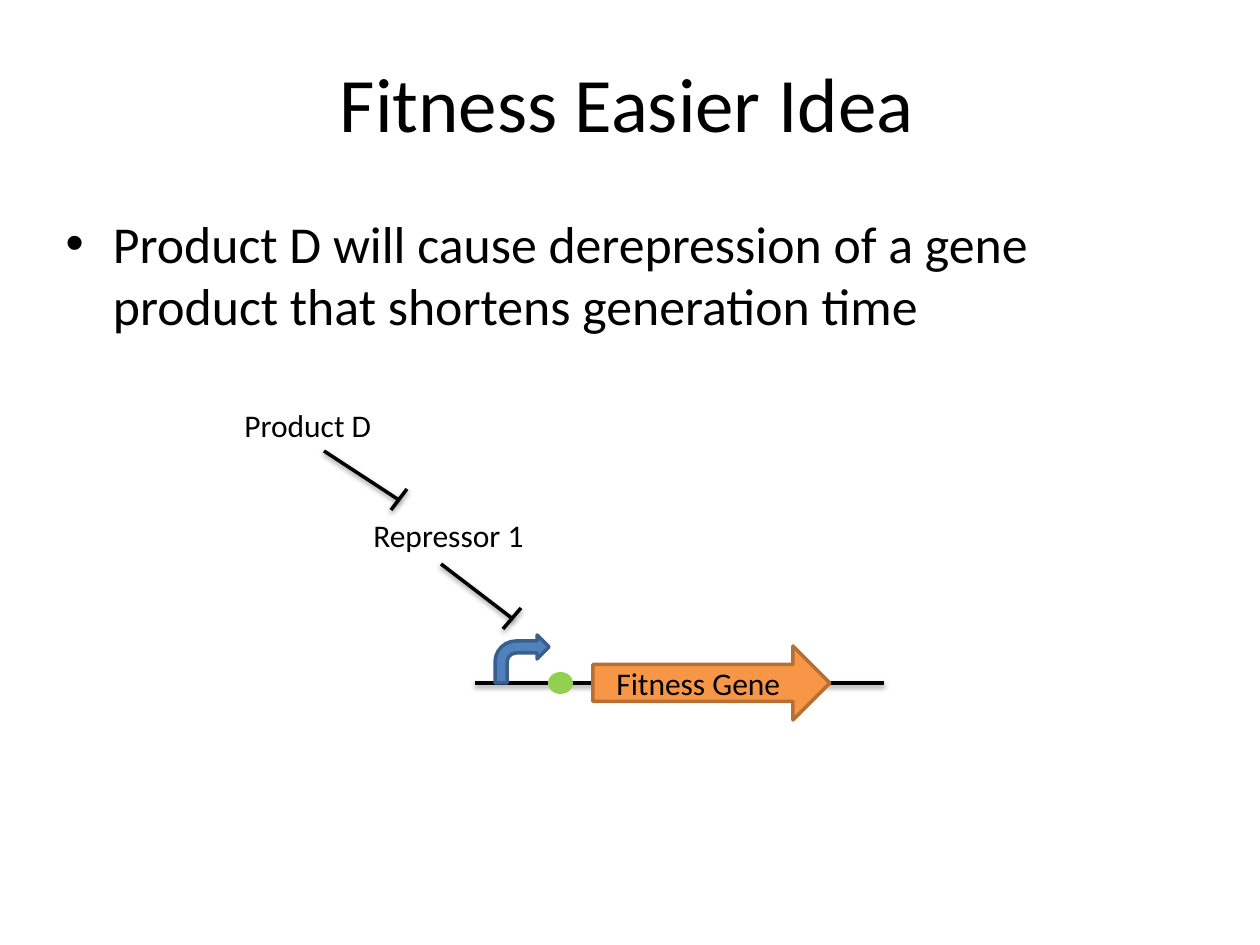
from lxml.etree import SubElement
from pptx import Presentation
from pptx.dml.color import RGBColor
from pptx.enum.shapes import MSO_CONNECTOR, MSO_SHAPE
from pptx.enum.text import MSO_ANCHOR, PP_ALIGN
from pptx.oxml.ns import qn
from pptx.util import Emu, Pt

PX = 914400 / 126
FONT = "Calibri"
COLORS = {
    "ink": "000000",
    "gene": "F79646",
    "gene edge": "B76F34",
    "promoter": "4F81BD",
    "promoter edge": "3A5F8C",
    "binding site": "92D050",
}

TITLE = ("Fitness Easier Idea", (60, 23, 1134, 158), 44)
IDEA = (
    "Product D will cause derepression of a gene product that shortens generation time",
    (53, 205, 1134, 132),
    29.6,
)
LABELS = {
    "Product D": (232, 400, 175, 50),
    "Repressor 1": (361, 510, 212, 50),
    "Fitness Gene": (604, 658, 217, 50),
}
REPRESSIONS = [
    [(324, 451, 399, 500), (391, 510, 407, 489)],
    [(441, 564, 513, 619), (503, 629, 521, 608)],
]
DNA = (475, 683, 884, 683)
PARTS = [
    (MSO_SHAPE.RIGHT_ARROW, (593, 646, 237, 74), "gene", "gene edge"),
    (MSO_SHAPE.BENT_ARROW, (495, 635, 54, 48), "promoter", "promoter edge"),
    (MSO_SHAPE.OVAL, (548, 672, 25, 22), "binding site", None),
]


def emu(lengths):
    return [Emu(round(length * PX)) for length in lengths]


def color(name):
    return RGBColor.from_string(COLORS[name])


def write(holder, text, size):
    frame = holder.text_frame
    frame.text = text
    frame.word_wrap = True
    paragraph = frame.paragraphs[0]
    font = paragraph.runs[0].font
    font.name, font.size = FONT, Pt(size)
    font.color.rgb = color("ink")
    return paragraph


def fill_placeholder(placeholder, content):
    text, box, size = content
    placeholder.left, placeholder.top, placeholder.width, placeholder.height = emu(box)
    return write(placeholder, text, size)


def draw_line(shapes, ends):
    line = shapes.add_connector(MSO_CONNECTOR.STRAIGHT, *emu(ends))
    line.line.color.rgb = color("ink")
    line.line.width = Pt(2)
    effects = SubElement(line._element.spPr, qn("a:effectLst"))
    shadow = SubElement(effects, qn("a:outerShdw"), blurRad=str(Pt(3.1)),
                        dist=str(Pt(1.6)), dir="5400000", rotWithShape="0")
    tint = SubElement(shadow, qn("a:srgbClr"), val=COLORS["ink"])
    SubElement(tint, qn("a:alpha"), val="38000")


def draw_part(shapes, preset, box, fill, edge):
    part = shapes.add_shape(preset, *emu(box))
    part.shadow.inherit = False
    part.fill.solid()
    part.fill.fore_color.rgb = color(fill)
    if edge:
        part.line.color.rgb = color(edge)
        part.line.width = Pt(2)
    else:
        part.line.fill.background()


def main():
    deck = Presentation()
    deck.slide_width, deck.slide_height = emu((1260, 945))
    slide = deck.slides.add_slide(deck.slide_layouts[1])
    shapes = slide.shapes

    title = fill_placeholder(shapes.title, TITLE)
    title.alignment = PP_ALIGN.CENTER
    shapes.title.text_frame.vertical_anchor = MSO_ANCHOR.MIDDLE
    fill_placeholder(slide.placeholders[1], IDEA)

    for repression in REPRESSIONS:
        group = shapes.add_group_shape()
        for ends in repression:
            draw_line(group.shapes, ends)

    draw_line(shapes, DNA)
    for part in PARTS:
        draw_part(shapes, *part)
    for text, box in LABELS.items():
        write(shapes.add_textbox(*emu(box)), text, 18)

    deck.save("out.pptx")


if __name__ == "__main__":
    main()
